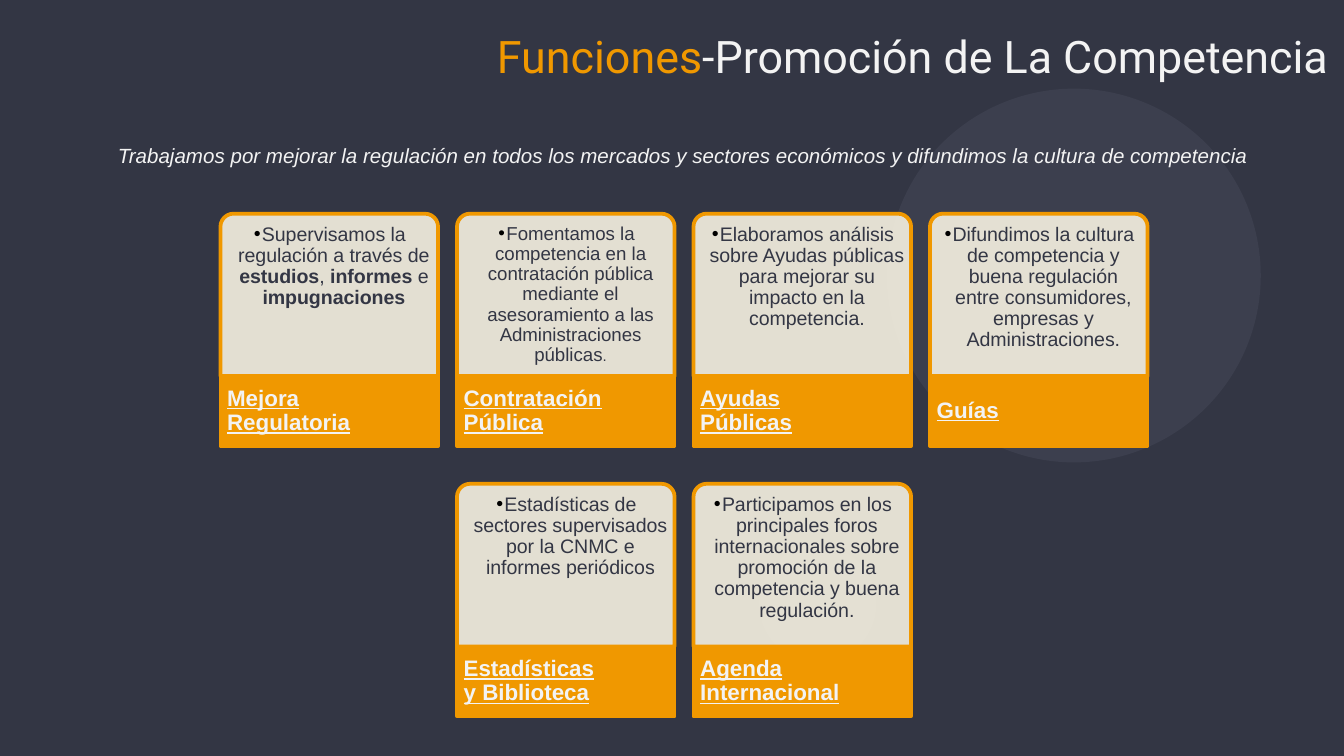
from dataclasses import dataclass

from lxml.etree import SubElement
from pptx import Presentation
from pptx.dml.color import RGBColor
from pptx.enum.shapes import MSO_SHAPE
from pptx.enum.text import MSO_ANCHOR, PP_ALIGN
from pptx.oxml.ns import qn
from pptx.util import Pt


@dataclass(frozen=True)
class Theme:
    night: RGBColor = RGBColor.from_string("333644")
    halo: RGBColor = RGBColor.from_string("3C3F4E")
    orange: RGBColor = RGBColor.from_string("F09800")
    cream: RGBColor = RGBColor.from_string("F7F2E2")
    light: RGBColor = RGBColor.from_string("F3F3F3")
    heading_font: str = "Roboto"
    body_font: str = "Arial"
    heading: float = 24
    motto: float = 11
    detail: float = 10.5
    compact: float = 10
    tiny: float = 8
    label: float = 12


theme = Theme()


def write(box, text, *, size, color=theme.light, font=theme.body_font, bold=False,
          italic=False, underline=False, align=PP_ALIGN.LEFT, anchor=MSO_ANCHOR.TOP,
          insets=(7.2, 7.2, 7.2, 7.2), spacing=1.0, indent=0, bullet=False):
    frame = box.text_frame
    frame.word_wrap = True
    frame.vertical_anchor = anchor
    frame.margin_left, frame.margin_top, frame.margin_right, frame.margin_bottom = map(Pt, insets)
    paragraph = frame.paragraphs[0]
    paragraph.alignment = align
    paragraph.line_spacing = spacing
    properties = paragraph._p.get_or_add_pPr()
    if indent:
        properties.set("marL", str(Pt(indent)))
        properties.set("indent", str(-Pt(indent) if bullet else 0))
    if bullet:
        bullet_color = SubElement(properties, qn("a:buClr"))
        SubElement(bullet_color, qn("a:srgbClr"), val="000000")
        SubElement(properties, qn("a:buFont"), typeface=font)
        SubElement(properties, qn("a:buChar"), char="•")
    pieces = [(text, {})] if isinstance(text, str) else text
    for words, changes in pieces:
        run = paragraph.add_run()
        run.text = words
        run.font.name = font
        run.font.size = Pt(changes.get("size", size))
        run.font.bold = changes.get("bold", bold)
        run.font.italic = italic
        run.font.underline = underline
        run.font.color.rgb = changes.get("color", color)


def add_block(kind, left, top, width, height, fill, line=None):
    block = slide.shapes.add_shape(kind, Pt(left), Pt(top), Pt(width), Pt(height))
    block.shadow.inherit = False
    block.fill.solid()
    block.fill.fore_color.rgb = fill
    if line is None:
        block.line.fill.background()
    else:
        block.line.color.rgb = line
        block.line.width = Pt(2)
    return block


prs = Presentation()
prs.slide_width, prs.slide_height = Pt(720), Pt(405)
slide = prs.slides.add_slide(prs.slide_layouts[5])
slide.background.fill.solid()
slide.background.fill.fore_color.rgb = theme.night

for left, top, diameter in [(475.2, 47.5, 200.2), (406.8, 292.3, 62.6)]:
    add_block(MSO_SHAPE.OVAL, left, top, diameter, diameter, theme.halo)

heading = slide.shapes.title
heading.left, heading.top, heading.width, heading.height = Pt(222.5), Pt(7.9), Pt(532.8), Pt(51.8)
write(heading, [("Funciones", {"color": theme.orange}), ("-Promoción de La Competencia", {})],
      size=theme.heading, font=theme.heading_font, align=PP_ALIGN.CENTER)

motto = slide.shapes.add_textbox(Pt(34.6), Pt(67.7), Pt(650.9), Pt(269.3))
write(motto, "Trabajamos por mejorar la regulación en todos los mercados y sectores económicos "
      "y difundimos la cultura de competencia",
      size=theme.motto, italic=True, align=PP_ALIGN.CENTER, spacing=1.15, indent=12.2)

strong = {"bold": True}
functions = [
    (0, 0, "Mejora Regulatoria", theme.detail,
     [("Supervisamos la regulación a través de ", {}), ("estudios", strong), (", ", {}),
      ("informes", strong), (" e ", {}), ("impugnaciones", strong)]),
    (0, 1, "Contratación Pública", theme.compact,
     [("Fomentamos la competencia en la contratación pública mediante el asesoramiento "
       "a las Administraciones públicas", {}), (".", {"size": theme.tiny})]),
    (0, 2, "Ayudas Públicas", theme.detail,
     "Elaboramos análisis sobre Ayudas públicas para mejorar su impacto en la competencia."),
    (0, 3, "Guías", theme.detail,
     "Difundimos la cultura de competencia y buena regulación entre consumidores, "
     "empresas y Administraciones."),
    (1, 1, "Estadísticas y Biblioteca", theme.detail,
     "Estadísticas de sectores supervisados por la CNMC e informes periódicos"),
    (1, 2, "Agenda Internacional", theme.detail,
     "Participamos en los principales foros internacionales sobre promoción de la "
     "competencia y buena regulación."),
]
card_width, card_height, label_height = 116.6, 87.1, 37.4
for row, column, name, detail_size, detail in functions:
    left = 118.1 + column * 126.7
    top = 114.5 + row * 144.7
    label_top = top + card_height

    card = add_block(MSO_SHAPE.ROUND_2_SAME_RECTANGLE, left, top, card_width, card_height,
                     theme.cream, theme.orange)
    card.adjustments[0] = 0.08
    card_color = card.fill._xPr.find(qn("a:solidFill"))[0]
    SubElement(card_color, qn("a:alpha"), val="90000")

    description = slide.shapes.add_textbox(Pt(left + 2.2), Pt(top + 2.2), Pt(113), Pt(85))
    write(description, detail, size=detail_size, color=theme.night, align=PP_ALIGN.CENTER,
          insets=(1.4, 3.4, 1.4, 1.4), spacing=0.9, indent=4.3, bullet=True)

    add_block(MSO_SHAPE.RECTANGLE, left, label_top, card_width, label_height,
              theme.orange, theme.orange)
    label = slide.shapes.add_textbox(Pt(left), Pt(label_top), Pt(82.1), Pt(label_height))
    write(label, name, size=theme.label, bold=True, underline=True, anchor=MSO_ANCHOR.MIDDLE,
          insets=(3.6, 0, 1.4, 0), spacing=0.9)

prs.save("out.pptx")
